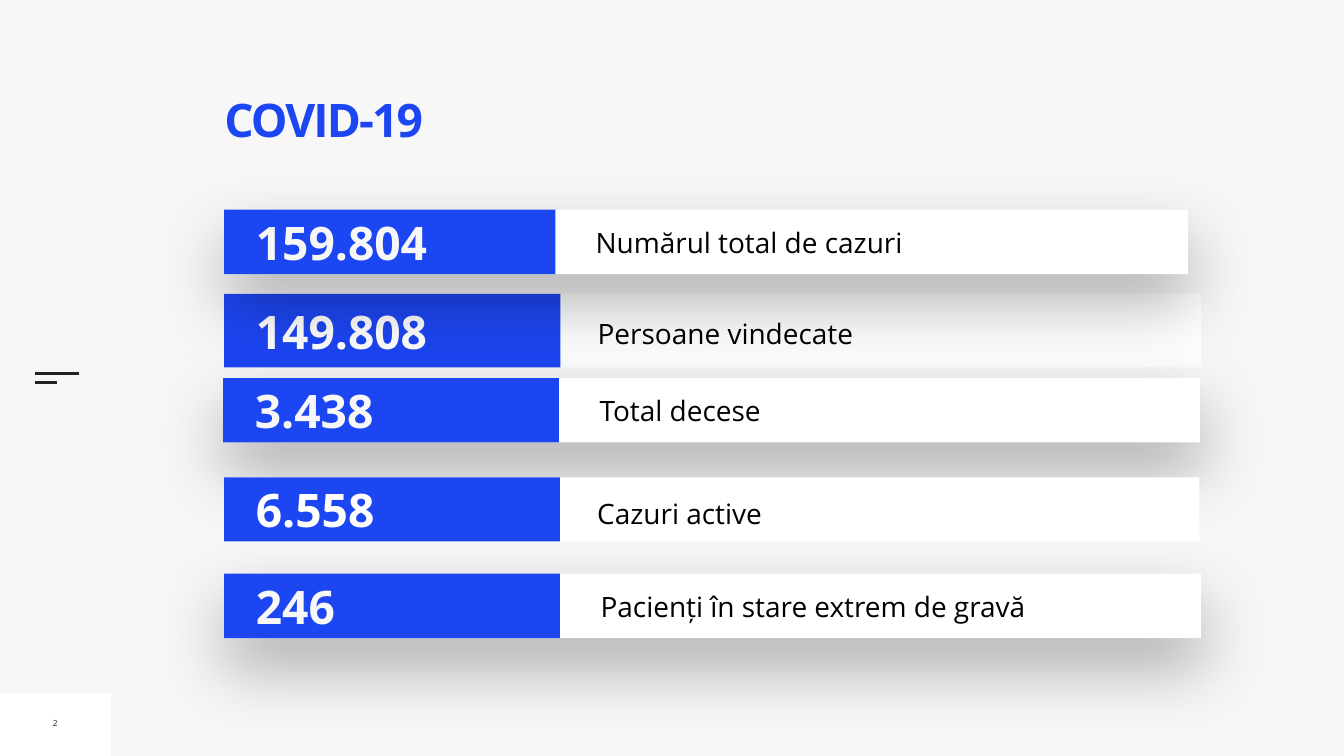
from dataclasses import dataclass

from lxml.etree import SubElement
from pptx import Presentation
from pptx.dml.color import RGBColor
from pptx.enum.shapes import MSO_CONNECTOR as Connector, MSO_SHAPE as Preset
from pptx.enum.text import MSO_ANCHOR as Anchor, MSO_AUTO_SIZE as AutoSize, PP_ALIGN as Align
from pptx.oxml.ns import qn
from pptx.shapes.autoshape import Shape
from pptx.slide import Slide
from pptx.text.text import TextFrame
from pptx.util import Inches, Pt

COLORS = {
    "background": "F7F7F7",
    "panel": "FEFFFF",
    "accent": "1D46F3",
    "ink": "222222",
    "label": "000000",
    "white": "FFFFFF",
    "shadow": "000000",
}
FONT = "Open Sans"
FIGURE_INDENT = 0.53
FIGURE_HEIGHT = 1.31


@dataclass
class StatRow:
    figure: str
    label: str
    left: float
    top: float
    width: float
    height: float
    figure_width: float
    label_left: float
    label_top: float
    label_height: float = 0.88
    figure_color: str = "background"
    raised: bool = True  # raised rows cast a shadow; flat ones have spaced labels


# Back to front: the shadow of the first total falls on the recovered row
ROWS = [
    StatRow("149.808", "Persoane vindecate", 4.45, 5.83, 19.38, 1.46, 6.67,
            11.86, 6.13, 0.78, "white", False),
    StatRow("159.804", "Numărul total de cazuri", 4.45, 4.16, 19.12, 1.28, 6.57, 11.72, 4.36),
    StatRow("3.438", "Total decese", 4.43, 7.5, 19.38, 1.28, 6.66, 11.8, 7.7),
    StatRow("246", "Pacienți în stare extrem de gravă", 4.45, 11.38, 19.38, 1.28, 6.66,
            11.82, 11.58),
    StatRow("6.558", "Cazuri active", 4.45, 9.47, 19.35, 1.27, 6.66,
            11.85, 9.69, 0.78, "white", False),
]


def rgb(color: str) -> RGBColor:
    return RGBColor.from_string(COLORS[color])


def write(frame: TextFrame, text: str, size: float, color: str,
          bold: bool = False, inset: float = 0.1) -> None:
    frame.text = text
    frame.margin_left = frame.margin_right = Inches(inset)
    frame.margin_top = frame.margin_bottom = Inches(inset)
    font = frame.paragraphs[0].runs[0].font
    font.name, font.size, font.bold = FONT, Pt(size), bold
    font.color.rgb = rgb(color)


def add_text(slide: Slide, text: str, left: float, top: float, width: float, height: float,
             size: float, color: str, bold: bool = False, inset: float = 0.1) -> TextFrame:
    frame = slide.shapes.add_textbox(
        Inches(left), Inches(top), Inches(width), Inches(height)).text_frame
    write(frame, text, size, color, bold, inset)
    frame.word_wrap = True
    frame.vertical_anchor = Anchor.MIDDLE
    frame.auto_size = AutoSize.SHAPE_TO_FIT_TEXT
    return frame


def add_bar(slide: Slide, left: float, top: float, width: float, height: float,
            color: str) -> Shape:
    bar = slide.shapes.add_shape(
        Preset.RECTANGLE, Inches(left), Inches(top), Inches(width), Inches(height))
    bar.shadow.inherit = False
    bar.fill.solid()
    bar.fill.fore_color.rgb = rgb(color)
    bar.line.fill.background()
    return bar


def cast_shadow(bar: Shape) -> None:
    effects = bar._element.spPr.find(qn("a:effectLst"))
    shadow = SubElement(effects, qn("a:outerShdw"), blurRad=str(Pt(100)), dist=str(Pt(40)),
                        dir="5400000", rotWithShape="0")
    shade = SubElement(shadow, qn("a:srgbClr"), val=COLORS["shadow"])
    SubElement(shade, qn("a:alpha"), val="30000")


def add_rule(slide: Slide, left: float, right: float, y: float) -> None:
    rule = slide.shapes.add_connector(
        Connector.STRAIGHT, Inches(left), Inches(y), Inches(right), Inches(y))
    rule.line.color.rgb = rgb("ink")
    rule.line.width = Pt(3)
    SubElement(rule._element.spPr, qn("a:effectLst"))


def add_row(slide: Slide, row: StatRow) -> None:
    panel = add_bar(slide, row.left, row.top, row.width, row.height, "panel")
    if row.raised:
        cast_shadow(panel)

    label = add_text(slide, row.label, row.label_left, row.label_top, 11.6, row.label_height,
                     40, "label", inset=0.1 if row.raised else 0)
    if not row.raised:
        label.paragraphs[0].line_spacing = 1.3
        label.paragraphs[0].space_before = Pt(20)

    add_bar(slide, row.left, row.top, row.figure_width, row.height, "accent")
    figure_top = row.top + (row.height - FIGURE_HEIGHT) / 2
    add_text(slide, row.figure, row.left + FIGURE_INDENT, figure_top, 6, FIGURE_HEIGHT,
             66, row.figure_color, bold=True)


def main() -> None:
    deck = Presentation()
    deck.slide_width, deck.slide_height = Inches(26.67), Inches(15)
    slide = deck.slides.add_slide(deck.slide_layouts[5])
    slide.background.fill.solid()
    slide.background.fill.fore_color.rgb = rgb("background")

    # Side decoration and page number
    add_bar(slide, 0, 13.76, 2.2, 1.24, "panel")
    add_rule(slide, 0.69, 1.57, 7.41)
    add_rule(slide, 0.69, 1.13, 7.59)
    page = add_text(slide, "2", 0.95, 14.14, 0.29, 0.4, 12, "ink")
    page.word_wrap = False
    page.paragraphs[0].alignment = Align.CENTER

    # Title
    title = slide.shapes.title
    title.left, title.top = Inches(4.45), Inches(2.03)
    title.width, title.height = Inches(13.01), Inches(2.73)
    write(title.text_frame, "COVID-19", 66, "accent", bold=True, inset=0)
    title.text_frame.vertical_anchor = Anchor.TOP
    heading = title.text_frame.paragraphs[0]
    heading.alignment = Align.LEFT
    heading.line_spacing = 0.8
    heading.runs[0].font._element.set("spc", "-270")

    # Statistics
    for row in ROWS:
        add_row(slide, row)

    deck.save("out.pptx")


if __name__ == "__main__":
    main()
